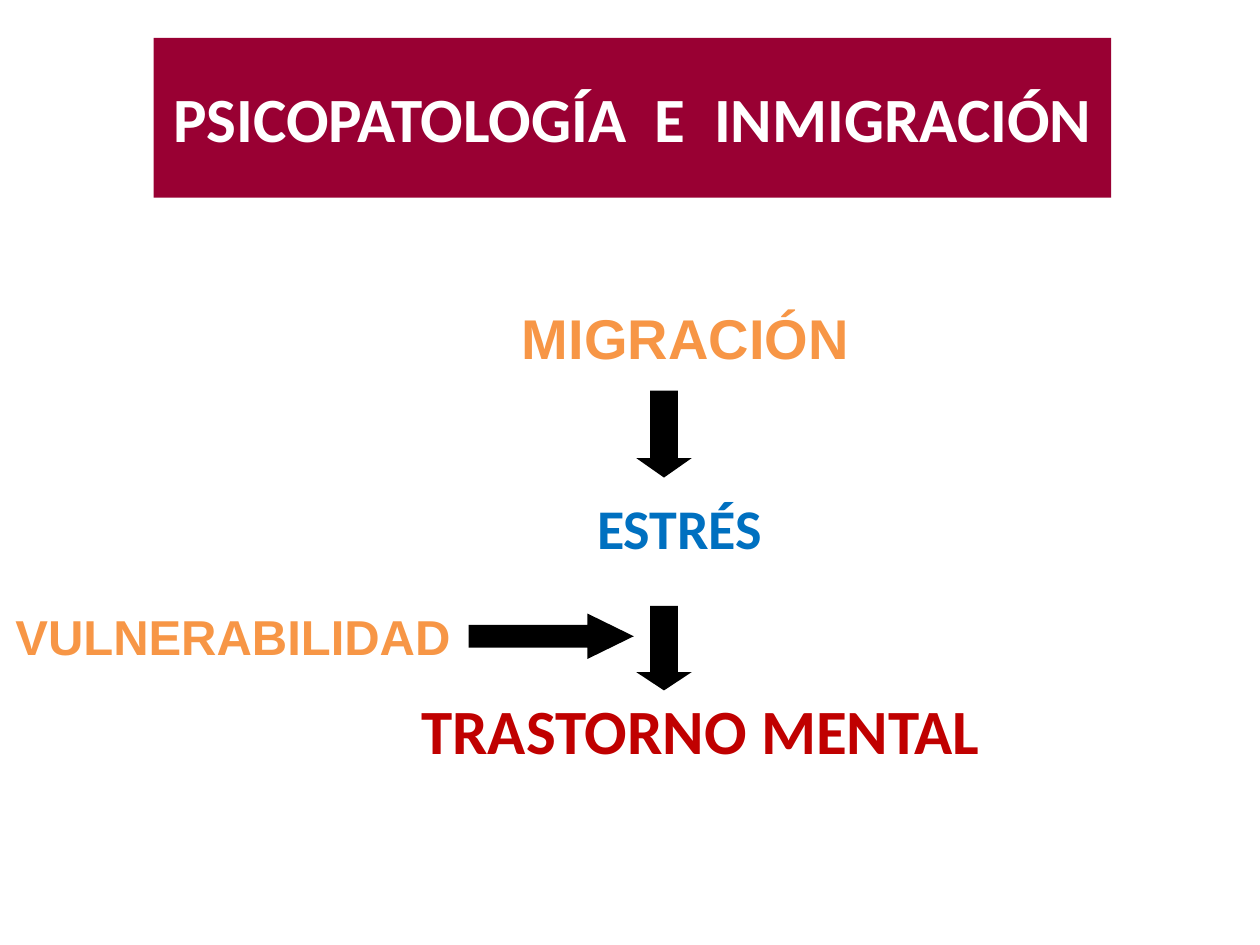
from pptx import Presentation
from pptx.dml.color import RGBColor
from pptx.enum.shapes import MSO_SHAPE as Shape
from pptx.enum.text import MSO_ANCHOR as Anchor, MSO_AUTO_SIZE as Fit, PP_ALIGN as Align
from pptx.util import Inches, Pt


def color(code):
    return RGBColor.from_string(code)


class Board:
    """Style and current slide, with one method for each kind of element."""

    ink, wine, white = "000000", "990033", "FFFFFF"
    orange, blue, red = "F79646", "0070C0", "C00000"

    def __init__(self, slide):
        self.slide = slide

    def letter(self, frame, text, size, hue, font):
        para = frame.paragraphs[0]
        para.text = text
        para.alignment = Align.CENTER
        face = para.runs[0].font
        face.name, face.size, face.bold = font, Pt(size), True
        face.color.rgb = color(hue)
        return para

    def solid(self, kind, box, fill):
        shape = self.slide.shapes.add_shape(kind, *map(Inches, box))
        shape.shadow.inherit = False
        shape.fill.solid()
        shape.fill.fore_color.rgb = color(fill)
        shape.line.fill.background()
        return shape

    def arrow(self, kind, box, head):
        shape = self.solid(kind, box, self.ink)
        shape.adjustments[0] = 0.5
        shape.adjustments[1] = head

    def label(self, text, box, size, hue, font="Calibri", tail=None):
        frame = self.slide.shapes.add_textbox(*map(Inches, box)).text_frame
        frame.word_wrap = False
        frame.auto_size = Fit.SHAPE_TO_FIT_TEXT
        para = self.letter(frame, text, size, hue, font)
        para.line_spacing = 0.9
        if tail:
            space = para.add_run()
            space.text = " "
            space.font.name, space.font.size, space.font.bold = font, Pt(tail), True

    def title(self, text, box):
        frame = self.solid(Shape.RECTANGLE, box, self.wine).text_frame
        frame.word_wrap = True
        frame.vertical_anchor = Anchor.MIDDLE
        self.letter(frame, text, 36, self.white, "Calibri")


def main():
    deck = Presentation()
    deck.slide_width, deck.slide_height = Inches(10), Inches(7.5)
    board = Board(deck.slides.add_slide(deck.slide_layouts[6]))

    board.label("MIGRACIÓN", (4.03, 2.42, 2.82, 0.59), 32, board.orange, "Arial")
    board.arrow(Shape.DOWN_ARROW, (5.05, 3.1, 0.44, 0.69), 0.35)
    board.label("ESTRÉS", (4.63, 3.93, 1.53, 0.59), 32, board.blue)
    board.arrow(Shape.DOWN_ARROW, (5.05, 4.81, 0.44, 0.67), 0.33)
    board.label("TRASTORNO MENTAL", (3.22, 5.51, 4.68, 0.65), 36, board.red)
    board.label("VULNERABILIDAD", (0, 4.77, 3.82, 0.59), 28, board.orange, "Arial", 32)
    board.arrow(Shape.RIGHT_ARROW, (3.72, 4.87, 1.31, 0.36), 1.02)
    board.title("PSICOPATOLOGÍA  E  INMIGRACIÓN", (1.22, 0.3, 7.6, 1.27))
    deck.save("out.pptx")


if __name__ == "__main__":
    main()
